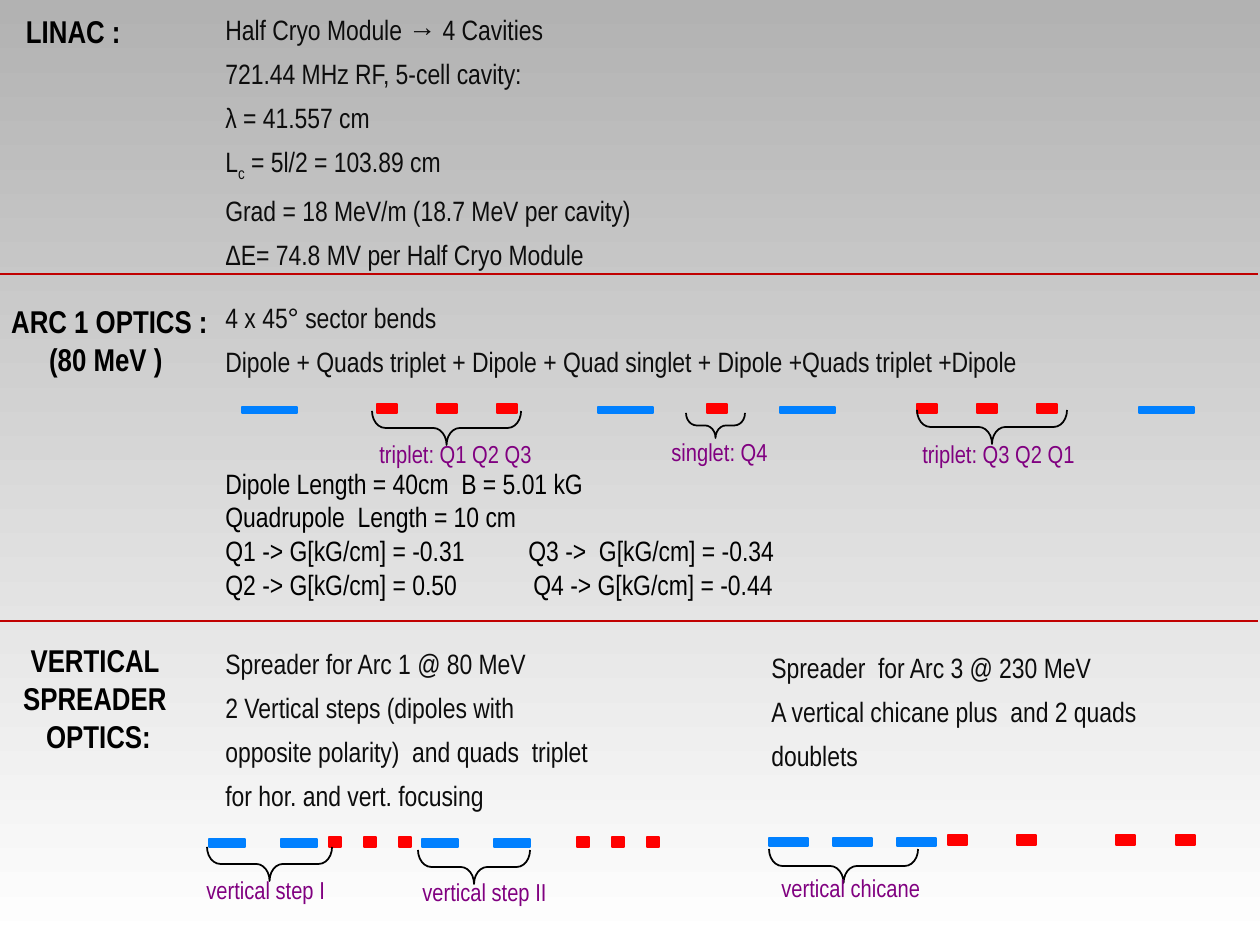
from dataclasses import dataclass

from lxml.etree import SubElement
from pptx import Presentation
from pptx.dml.color import RGBColor
from pptx.enum.shapes import MSO_CONNECTOR, MSO_SHAPE
from pptx.enum.text import MSO_AUTO_SIZE, PP_ALIGN
from pptx.oxml.ns import qn
from pptx.util import Emu, Pt

PX_PER_INCH = 126
TAB = chr(9)


@dataclass(frozen=True)
class Style:
    size: int
    color: str
    bold: bool = False
    align: PP_ALIGN = PP_ALIGN.LEFT
    before: float = 0


@dataclass(frozen=True)
class Theme:
    font: str = "Arial Narrow"
    top: str = "B2B2B2"
    bottom: str = "FFFFFF"
    rule: str = "C00000"
    dipole: str = "0080FF"
    quad: str = "FF0000"
    brace: str = "000000"
    heading: Style = Style(18, "000000", True, PP_ALIGN.CENTER)
    body: Style = Style(16, "0D0D0D", before=6)
    justified: Style = Style(16, "0D0D0D", align=PP_ALIGN.JUSTIFY, before=6)
    values: Style = Style(16, "000000")
    label: Style = Style(14, "800080")


THEME = Theme()


def px(n):
    return Emu(round(n * 914400 / PX_PER_INCH))


def rgb(color):
    return RGBColor.from_string(color)


def write(tf, lines, style, lead=None, tabs=None):
    for i, line in enumerate(lines):
        p = tf.add_paragraph() if tf.paragraphs[0].runs else tf.paragraphs[0]
        p.alignment = style.align
        p.space_before = Pt(lead if lead and i == 0 else style.before)
        if tabs and i in tabs:
            stops = SubElement(p._p.get_or_add_pPr(), qn("a:tabLst"))
            SubElement(stops, qn("a:tab"), pos=str(px(tabs[i])), algn="l")
        p.font.name = THEME.font
        p.font.size = Pt(style.size)
        p.font.bold = style.bold
        p.font.color.rgb = rgb(style.color)
        for k, piece in enumerate(line.split("|")):
            r = p.add_run()
            r.text = piece
            if k % 2:
                r._r.get_or_add_rPr().set("baseline", "-25000")


def text(s, x, y, w, h, lines, style):
    tf = s.shapes.add_textbox(px(x), px(y), px(w), px(h)).text_frame
    tf.word_wrap = True
    tf.auto_size = MSO_AUTO_SIZE.SHAPE_TO_FIT_TEXT
    write(tf, lines, style)
    return tf


def magnets(s, xs, y, w, h, color):
    for x in xs:
        sp = s.shapes.add_shape(MSO_SHAPE.RECTANGLE, px(x), px(y), px(w), px(h))
        sp.shadow.inherit = False
        sp.fill.solid()
        sp.fill.fore_color.rgb = rgb(color)
        sp.line.color.rgb = rgb(color)
        sp.line.width = Pt(0.75)


def brace(s, x, y, w, h=34, curve=0.391):
    left, top = x + (w - h) / 2, y + (h - w) / 2
    sp = s.shapes.add_shape(MSO_SHAPE.LEFT_BRACE, px(left), px(top), px(h), px(w))
    sp.rotation = 270
    sp._element.spPr.find(qn("a:xfrm")).set("flipV", "1")
    sp.adjustments[0] = curve
    sp.adjustments[1] = 0.5
    sp.shadow.inherit = False
    sp.fill.background()
    sp.line.color.rgb = rgb(THEME.brace)
    sp.line.width = Pt(1)


def divider(s, x1, x2, y):
    line = s.shapes.add_connector(MSO_CONNECTOR.STRAIGHT, px(x1), px(y), px(x2), px(y))
    line.line.color.rgb = rgb(THEME.rule)
    line.line.width = Pt(1.5)
    SubElement(line._element.spPr, qn("a:effectLst"))


def background(s):
    fill = s.background.fill
    fill.gradient()
    fill.gradient_angle = 270
    for stop, color in zip(fill.gradient_stops, (THEME.top, THEME.bottom)):
        stop.color.rgb = rgb(color)


def linac(s, x, y):
    text(s, x - 300, y + 6, 761, 90, ["LINAC :  "], THEME.heading)
    text(s, x + 213, y + 6, 630, 270, [
        "Half Cryo Module → 4 Cavities",
        "721.44 MHz RF, 5-cell cavity:",
        "λ = 41.557 cm",
        "L|c| = 5l/2 = 103.89 cm",
        "Grad = 18 MeV/m (18.7 MeV per cavity)",
        "ΔE= 74.8 MV per Half Cryo Module",
    ], THEME.body)


def arc_optics(s, x, y):
    text(s, x - 74, y + 21, 367, 127, ["ARC 1 OPTICS :", "(80 MeV ) "], THEME.heading)
    tf = text(s, x + 213, y + 19, 1017, 394, [
        "4 x 45° sector bends",
        "Dipole + Quads triplet + Dipole + Quad singlet + Dipole +Quads triplet +Dipole",
    ], THEME.body)
    write(tf, [
        "Dipole Length = 40cm  B = 5.01 kG",
        "Quadrupole  Length = 10 cm",
        TAB.join(("Q1 -> G[kG/cm] = -0.31", "Q3 ->  G[kG/cm] = -0.34")),
        TAB.join(("Q2 -> G[kG/cm] = 0.50", "Q4 -> G[kG/cm] = -0.44")),
    ], THEME.values, lead=50.5, tabs={2: 303, 3: 308})
    magnets(s, [x + dx for dx in (242, 598, 780, 1139)], y + 132, 55, 6, THEME.dipole)
    triplets = [start + 60 * i for start in (377, 917) for i in range(3)]
    magnets(s, [x + dx for dx in triplets + [707]], y + 129, 20, 9, THEME.quad)
    for dx, dy, w, label in ((367, 158, 184, "triplet: Q1 Q2 Q3"),
                             (659, 156, 123, "singlet: Q4"),
                             (910, 158, 184, "triplet: Q3 Q2 Q1")):
        text(s, x + dx, y + dy, w, 42, [label], THEME.label)
    brace(s, x + 372, y + 136, 149)
    brace(s, x + 686, y + 138, 59, 25, 0.421)
    brace(s, x + 917, y + 135, 150)


def arc1_spreader(s, x, y):
    text(s, x + 213, y + 19, 503, 180, [
        "Spreader for Arc 1 @ 80 MeV",
        "2 Vertical steps (dipoles with ",
        "opposite polarity)  and quads  triplet ",
        "for hor. and vert. focusing",
    ], THEME.justified)
    dipoles = [start + 72 * i for start in (209, 422) for i in range(2)]
    quads = [start + 35 * i for start in (329, 577) for i in range(3)]
    magnets(s, [x + dx for dx in dipoles], y + 218, 36, 8, THEME.dipole)
    magnets(s, [x + dx for dx in quads], y + 216, 12, 10, THEME.quad)
    brace(s, x + 207, y + 226, 125)
    brace(s, x + 418, y + 229, 112)
    text(s, x + 194, y + 248, 158, 42, ["vertical step I"], THEME.label)
    text(s, x + 410, y + 250, 180, 42, ["vertical step II"], THEME.label)


def arc3_spreader(s, x, y):
    text(s, x, y + 23, 630, 136, [
        "Spreader  for Arc 3 @ 230 MeV",
        "A vertical chicane plus  and 2 quads",
        "doublets",
    ], THEME.body)
    magnets(s, [x + 10 + 64 * i for i in range(3)], y + 217, 39, 8, THEME.dipole)
    magnets(s, [x + dx for dx in (189, 258, 357, 417)], y + 214, 19, 10, THEME.quad)
    brace(s, x + 10, y + 228, 149)
    text(s, x + 10, y + 246, 179, 42, ["vertical chicane"], THEME.label)


def spreader_optics(s, x, y):
    text(s, x - 25, y + 14, 247, 165, ["VERTICAL ", "SPREADER ", "OPTICS:"], THEME.heading)
    arc1_spreader(s, x, y)
    arc3_spreader(s, x + 759, y)


def main():
    prs = Presentation()
    prs.slide_width, prs.slide_height = px(1260), px(945)
    s = prs.slides.add_slide(prs.slide_layouts[6])
    background(s)
    linac(s, 0, 0)
    divider(s, 0, 1258, 274)
    arc_optics(s, 0, 275)
    divider(s, -2, 1258, 621)
    spreader_optics(s, 0, 621)
    prs.save("out.pptx")


if __name__ == "__main__":
    main()
